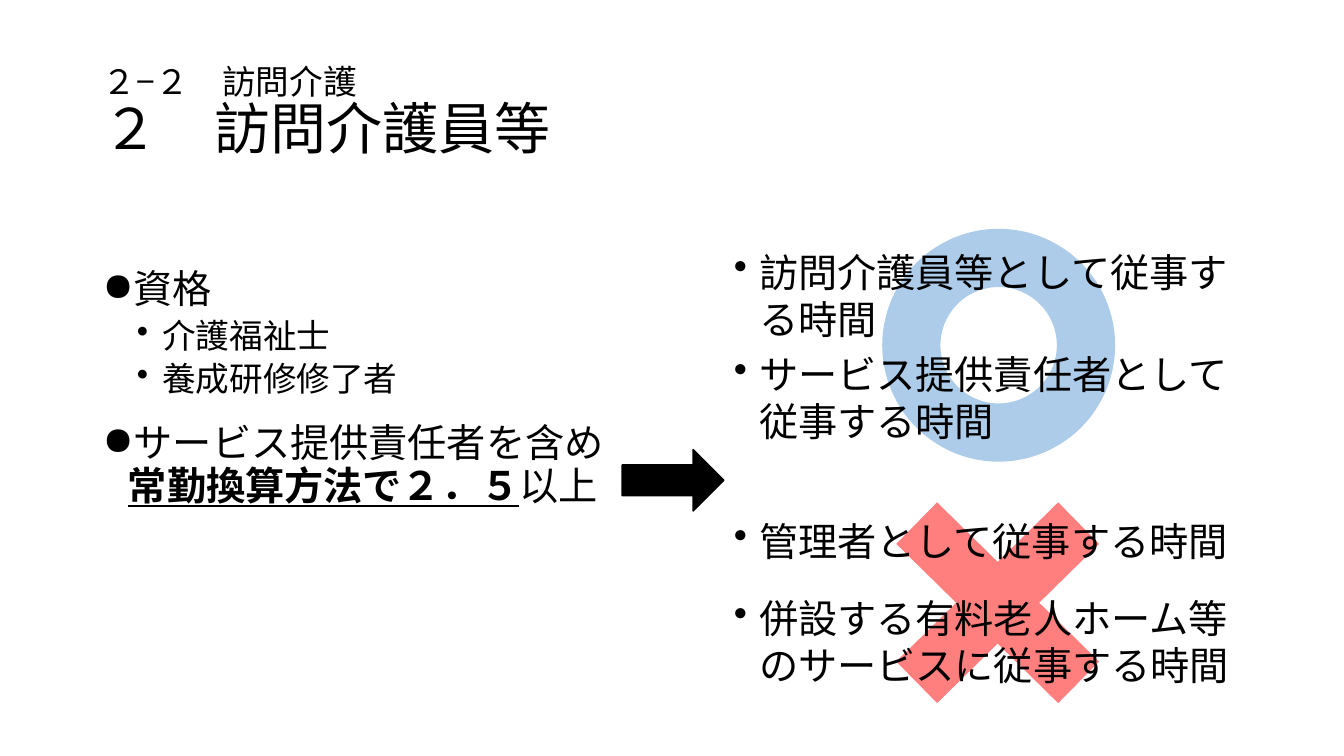
from dataclasses import dataclass

import pptx
import pptx.dml.color
import pptx.enum.shapes
import pptx.enum.text
import pptx.oxml
import pptx.oxml.ns
import pptx.util
from pptx.util import Inches

Shape = pptx.enum.shapes.MSO_SHAPE
Anchor = pptx.enum.text.MSO_ANCHOR
Fit = pptx.enum.text.MSO_AUTO_SIZE
Box = tuple[float, float, float, float]


@dataclass(frozen=True)
class Theme:
    font: str = "Calibri"
    ink: str = "000000"
    good: str = "5B9BD5"
    bad: str = "FF0000"
    small: int = 24
    text: int = 28
    title: int = 40


@dataclass(frozen=True)
class Item:
    text: str
    before: int = 0
    after: int = 0
    mark: str = "•"
    level: int = 0
    strong: str = ""
    tail: str = ""


@dataclass(frozen=True)
class Panel:
    box: Box
    items: list[Item]
    anchor: Anchor = Anchor.MIDDLE
    fit: Fit = Fit.SHAPE_TO_FIT_TEXT
    pitch: float = 1.0


@dataclass(frozen=True)
class Mark:
    kind: Shape
    box: Box
    fill: str
    alpha: int = 100
    adjust: float | None = None


THEME = Theme()

MARKS = [
    Mark(Shape.MATH_MULTIPLY, (8.35, 4.46, 3.09, 3.04), THEME.bad, 50, 0.19),
    Mark(Shape.DONUT, (8.75, 2.27, 2.31, 2.31), THEME.good, 50),
    Mark(Shape.RIGHT_ARROW, (6.17, 4.46, 1.01, 0.61), THEME.ink),
]

PANELS = [
    Panel((0.92, 2.63, 5.25, 4.13), [
        Item("資格", mark="●"),
        Item("介護福祉士", before=5, level=1),
        Item("養成研修修了者", before=5, level=1),
        Item("サービス提供責任者を含め", before=18, mark="●",
             strong="常勤換算方法で２．５", tail="以上"),
    ], Anchor.TOP, Fit.NONE, 0.9),
    Panel((7.18, 5.07, 5.23, 1.82), [
        Item("管理者として従事する時間", before=12, after=12),
        Item("併設する有料老人ホーム等のサービスに従事する時間", before=10),
    ]),
    Panel((7.18, 2.4, 5.23, 2.07), [
        Item("訪問介護員等として従事する時間", before=12),
        Item("サービス提供責任者として従事する時間", before=6),
    ]),
]


def color(code: str) -> pptx.dml.color.RGBColor:
    return pptx.dml.color.RGBColor.from_string(code)


def style(run, size: int) -> None:
    run.font.name = THEME.font
    run.font.size = pptx.util.Pt(size)
    run.font.color.rgb = color(THEME.ink)


def bullet(para, mark: str, left: float) -> None:
    """Hang a bullet a quarter inch before the text edge."""
    props = para._p.get_or_add_pPr()
    props.set("marL", str(Inches(left)))
    props.set("indent", str(Inches(-0.25)))
    char = pptx.oxml.parse_xml(
        f'<a:buChar {pptx.oxml.ns.nsdecls("a")} char="{mark}"/>')
    props.append(char)


def add_mark(slide, mark: Mark) -> None:
    shape = slide.shapes.add_shape(mark.kind, *map(Inches, mark.box))
    shape.shadow.inherit = False
    shape.fill.solid()
    shape.fill.fore_color.rgb = color(mark.fill)
    if mark.alpha < 100:
        shape.line.fill.background()
        tint = shape.fill._xPr.find(".//" + pptx.oxml.ns.qn("a:srgbClr"))
        tint.append(pptx.oxml.parse_xml(
            f'<a:alpha {pptx.oxml.ns.nsdecls("a")} val="{mark.alpha * 1000}"/>'))
    else:
        shape.line.color.rgb = color(mark.fill)
        shape.line.width = pptx.util.Pt(1)
    if mark.adjust is not None:
        shape.adjustments[0] = mark.adjust


def add_item(para, item: Item, pitch: float) -> None:
    para.text = item.text
    para.level = item.level
    para.line_spacing = pitch
    para.space_before = pptx.util.Pt(item.before)
    para.space_after = pptx.util.Pt(item.after)
    bullet(para, item.mark, 0.59 if item.level else 0.25)
    if item.strong:
        key = para.add_run()
        key.text = item.strong
        key.font.bold = key.font.underline = True
        para.add_run().text = item.tail
    for run in para.runs:
        style(run, THEME.small if item.level else THEME.text)


def add_panel(slide, panel: Panel) -> None:
    frame = slide.shapes.add_textbox(*map(Inches, panel.box)).text_frame
    frame.word_wrap = True
    frame.auto_size = panel.fit
    frame.vertical_anchor = panel.anchor
    for i, item in enumerate(panel.items):
        para = frame.add_paragraph() if i else frame.paragraphs[0]
        add_item(para, item, panel.pitch)


def add_title(slide) -> None:
    title = slide.shapes.title
    title.left, title.top, title.width, title.height = map(
        Inches, (0.92, 0.4, 11.5, 1.45))
    frame = title.text_frame
    frame.auto_size = Fit.NONE
    frame.vertical_anchor = Anchor.MIDDLE
    para = frame.paragraphs[0]
    para.text = "２−２　訪問介護\v２　訪問介護員等"
    para.alignment = pptx.enum.text.PP_ALIGN.LEFT
    para.line_spacing = 0.9
    for run, size in zip(para.runs, (THEME.small, THEME.title)):
        style(run, size)


def main() -> None:
    deck = pptx.Presentation()
    deck.slide_width, deck.slide_height = Inches(13.33), Inches(7.5)
    slide = deck.slides.add_slide(deck.slide_layouts[5])
    add_title(slide)
    for mark in MARKS:
        add_mark(slide, mark)
    for panel in PANELS:
        add_panel(slide, panel)
    deck.save("out.pptx")


if __name__ == "__main__":
    main()
